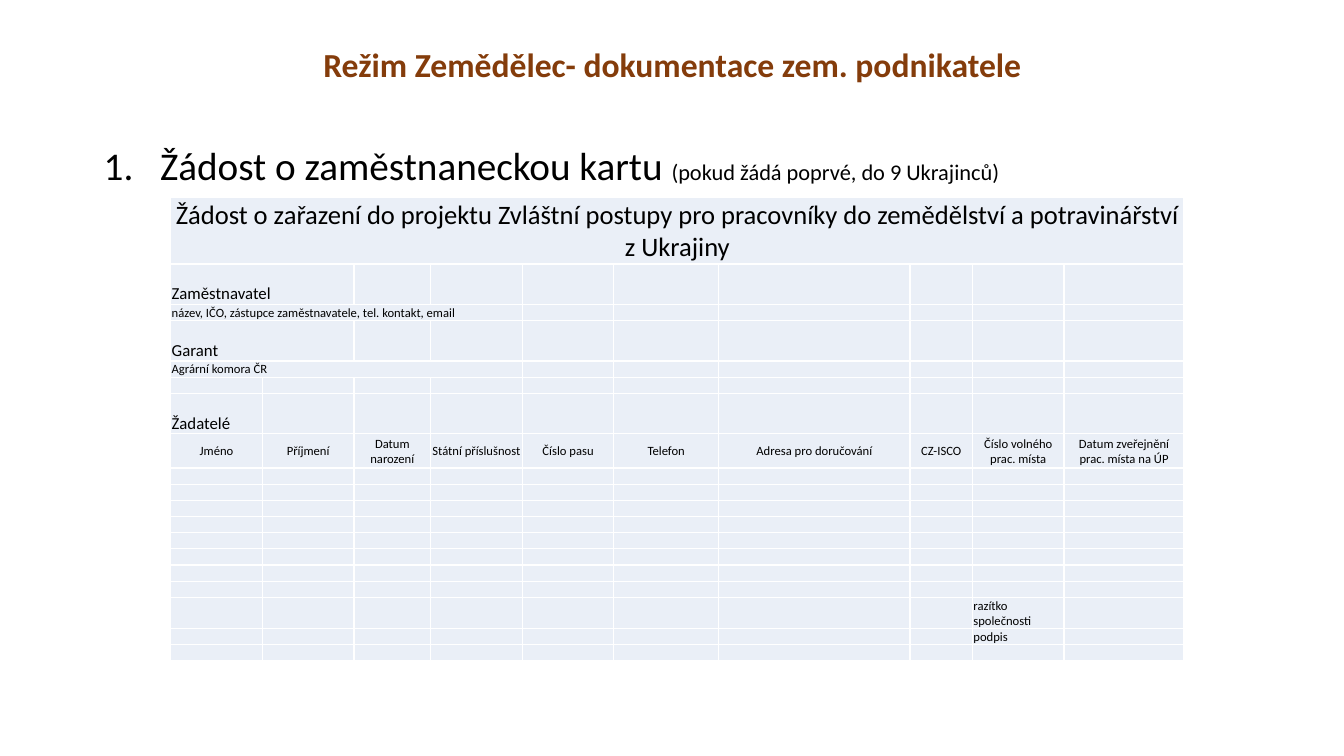
from lxml.etree import SubElement
from pptx import Presentation
from pptx.dml.color import RGBColor
from pptx.enum.text import MSO_ANCHOR, PP_ALIGN
from pptx.oxml.ns import qn
from pptx.util import Inches, Pt

ROW_COUNT, COLUMN_COUNT = 19, 10
COLUMN_WIDTHS = [0.91, 0.91, 0.76, 0.91, 0.91, 1.04, 1.9, 0.62, 0.91, 1.19]
LINE_ROW = 0.16
TALL_ROWS = {0: 0.66, 1: 0.4, 3: 0.4, 6: 0.4, 7: 0.34, 16: 0.3}
ROW_HEIGHTS = [TALL_ROWS.get(row, LINE_ROW) for row in range(ROW_COUNT)]
HEADINGS = [
    "Jméno", "Příjmení", "Datum narození", "Státní příslušnost", "Číslo pasu",
    "Telefon", "Adresa pro doručování", "CZ-ISCO", "Číslo volného prac. místa",
    "Datum zveřejnění prac. místa na ÚP",
]
# Form entries: (row, column): (text, size, columns spanned)
FORM_TEXTS = {
    (0, 0): ("Žádost o zařazení do projektu Zvláštní postupy pro pracovníky "
             "do zemědělství a potravinářství z Ukrajiny", 19, COLUMN_COUNT),
    (1, 0): ("Zaměstnavatel", 12, 2),
    (2, 0): ("název, IČO, zástupce zaměstnavatele, tel. kontakt, email", 9, 4),
    (3, 0): ("Garant", 12, 2),
    (4, 0): ("Agrární komora ČR", 9, 4),
    (6, 0): ("Žadatelé", 12, 1),
    (16, 8): ("razítko společnosti", 9, 1),
    (17, 8): ("podpis", 9, 1),
}
HEADING_ROW = 7
FORM_TEXTS.update({(HEADING_ROW, column): (heading, 9, 1)
                   for column, heading in enumerate(HEADINGS)})


def color(hex_string):
    return RGBColor.from_string(hex_string)


class FormSlide:
    font = "Calibri"
    ink = "000000"
    accent = "843C0B"
    cell_fill = "EAEFF7"
    border = "FFFFFF"

    def __init__(self, deck):
        self.deck = deck
        self.slide = deck.slides.add_slide(deck.slide_layouts[6])

    def place(self, left, top, width, height):
        """Turn percentages of the slide into lengths."""
        across, down = self.deck.slide_width / 100, self.deck.slide_height / 100
        return [int(left * across), int(top * down),
                int(width * across), int(height * down)]

    def add_span(self, para, text, size, hex_string=None, bold=False):
        span = para.add_run()
        span.text = text
        span.font.name = self.font
        span.font.size = Pt(size)
        span.font.bold = bold
        span.font.color.rgb = color(hex_string or self.ink)

    def add_text(self, area, anchor):
        box = self.slide.shapes.add_textbox(*self.place(*area))
        box.text_frame.word_wrap = True
        box.text_frame.vertical_anchor = anchor
        para = box.text_frame.paragraphs[0]
        para.line_spacing = 0.9
        return para

    def add_title(self, text, area):
        para = self.add_text(area, MSO_ANCHOR.MIDDLE)
        para.alignment = PP_ALIGN.CENTER
        self.add_span(para, text, 24, self.accent, bold=True)

    def add_numbered(self, spans, area):
        para = self.add_text(area, MSO_ANCHOR.TOP)
        properties = para._p.get_or_add_pPr()
        indent = Inches(0.56)
        properties.set("marL", str(indent))
        properties.set("indent", str(-indent))
        SubElement(properties, qn("a:buFont"), typeface=self.font)
        SubElement(properties, qn("a:buAutoNum"), type="arabicPeriod")
        for text, size in spans:
            self.add_span(para, text, size)

    def style_cell(self, cell):
        cell.margin_left = cell.margin_right = cell.margin_top = Inches(0.01)
        cell.margin_bottom = 0
        properties = cell._tc.get_or_add_tcPr()
        for side in ("lnL", "lnR", "lnT", "lnB"):
            line = SubElement(properties, qn(f"a:{side}"), w=str(Pt(1)))
            fill = SubElement(line, qn("a:solidFill"))
            SubElement(fill, qn("a:srgbClr"), val=self.border)
        cell.fill.solid()
        cell.fill.fore_color.rgb = color(self.cell_fill)

    def add_form(self, texts, area):
        left, top, width, height = self.place(*area)
        table = self.slide.shapes.add_table(
            ROW_COUNT, COLUMN_COUNT, left, top, width, height).table
        table.first_row = table.horz_banding = False
        for column, share in zip(table.columns, COLUMN_WIDTHS):
            column.width = int(width * share / sum(COLUMN_WIDTHS))
        for row, share in zip(table.rows, ROW_HEIGHTS):
            row.height = int(height * share / sum(ROW_HEIGHTS))
        for row in range(ROW_COUNT):
            for column in range(COLUMN_COUNT):
                cell = table.cell(row, column)
                self.style_cell(cell)
                para = cell.text_frame.paragraphs[0]
                if (row, column) not in texts:
                    # Small type keeps empty rows low
                    SubElement(para._p, qn("a:endParaRPr"), sz="800")
                    continue
                text, size, columns = texts[row, column]
                if columns > 1:
                    cell.merge(table.cell(row, column + columns - 1))
                is_heading = row == HEADING_ROW
                cell.vertical_anchor = (
                    MSO_ANCHOR.MIDDLE if is_heading else MSO_ANCHOR.BOTTOM)
                if is_heading or row == 0:
                    para.alignment = PP_ALIGN.CENTER
                self.add_span(para, text, size)


def main():
    deck = Presentation()
    deck.slide_width, deck.slide_height = Inches(13.33), Inches(7.5)
    page = FormSlide(deck)

    # Title and numbered step
    page.add_title("Režim Zemědělec- dokumentace zem. podnikatele",
                   (6.9, 2.53, 86.25, 12.53))
    page.add_numbered([("Žádost o zaměstnaneckou kartu ", 28),
                       ("(pokud žádá poprvé, do 9 Ukrajinců)", 16)],
                      (6.98, 18.8, 86.25, 69.2))

    # Application form
    page.add_form(FORM_TEXTS, (12.7, 26.1, 75.4, 61.2))

    deck.save("out.pptx")


if __name__ == "__main__":
    main()
